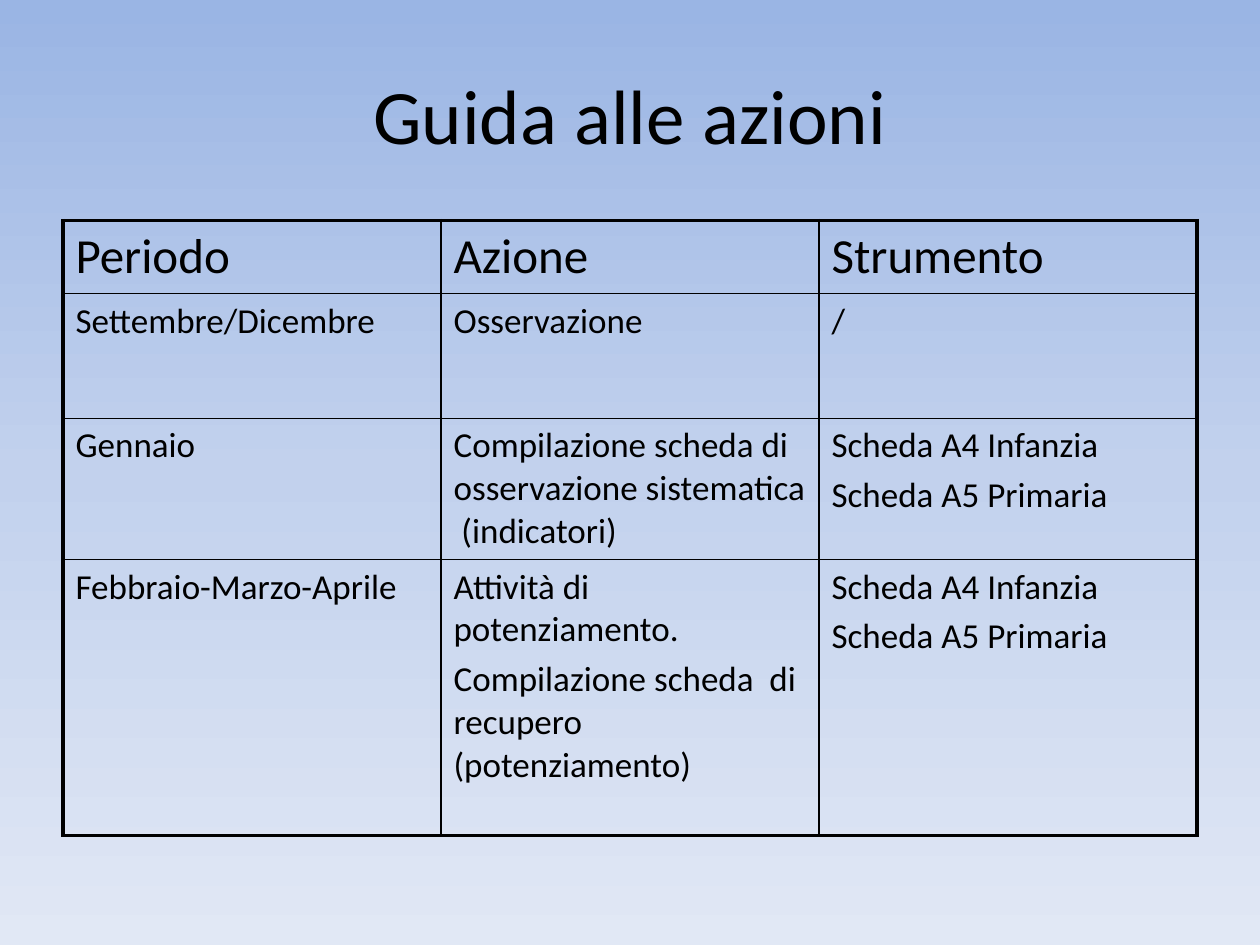
from copy import deepcopy
from lxml import etree
from pptx import Presentation
from pptx import util as u
from pptx.dml.color import RGBColor
from pptx.enum import text
from pptx.oxml.ns import qn

FONT, INK = "Calibri", "000000"
BACKGROUND = [(0, "9AB5E4"), (0.5, "C2D1ED"), (1, "E1E8F5")]
TITLE = "Guida alle azioni"
SHEETS = "Scheda A4 Infanzia\nScheda A5 Primaria"
ROWS = [
    ("Periodo", "Azione", "Strumento"),
    ("Settembre/Dicembre", "Osservazione", "/"),
    ("Gennaio", "Compilazione scheda di osservazione sistematica  (indicatori)", SHEETS),
    ("Febbraio-Marzo-Aprile",
     "Attività di potenziamento.\nCompilazione scheda  di recupero (potenziamento)", SHEETS),
]
ROW_HEIGHTS = [0.58, 0.99, 1.12, 2.19]
COLUMN_WIDTH = 3
OUTER, INNER = 2.25, 1


def color(value):
    return RGBColor.from_string(value)


def write(frame, content, size, align=text.PP_ALIGN.LEFT):
    frame.text = content
    for index, paragraph in enumerate(frame.paragraphs):
        paragraph.alignment = align
        paragraph.space_before = u.Pt(0.2 * size if index else 0)
        for run in paragraph.runs:
            run.font.name, run.font.size = FONT, u.Pt(size)
            run.font.color.rgb = color(INK)


def set_borders(cell, widths):
    properties = cell._tc.get_or_add_tcPr()
    for index, (side, width) in enumerate(zip("LRTB", widths)):
        line = etree.Element(qn("a:ln" + side), w=str(u.Pt(width)))
        fill = etree.SubElement(line, qn("a:solidFill"))
        etree.SubElement(fill, qn("a:srgbClr"), val=INK)
        properties.insert(index, line)


presentation = Presentation()
presentation.slide_width, presentation.slide_height = u.Inches(10), u.Inches(7.5)
slide = presentation.slides.add_slide(presentation.slide_layouts[6])

background = slide.background.fill
background.gradient()
background.gradient_angle = 270
stop_list = next(slide.element.iter(qn("a:gsLst")))
stop_list.insert(1, deepcopy(stop_list[0]))
for stop, (position, shade) in zip(background.gradient_stops, BACKGROUND):
    stop.position, stop.color.rgb = position, color(shade)

title = slide.shapes.add_textbox(u.Inches(0.5), u.Inches(0.28), u.Inches(9), u.Inches(1.25))
title.text_frame.word_wrap = True
title.text_frame.vertical_anchor = text.MSO_ANCHOR.MIDDLE
write(title.text_frame, TITLE, 44, text.PP_ALIGN.CENTER)

row_count, column_count = len(ROWS), len(ROWS[0])
table = slide.shapes.add_table(
    row_count, column_count, u.Inches(0.5), u.Inches(1.75),
    u.Inches(COLUMN_WIDTH * column_count), u.Inches(sum(ROW_HEIGHTS))).table
for column in table.columns:
    column.width = u.Inches(COLUMN_WIDTH)
for r, (contents, height) in enumerate(zip(ROWS, ROW_HEIGHTS)):
    table.rows[r].height = u.Inches(height)
    for c, content in enumerate(contents):
        cell = table.cell(r, c)
        write(cell.text_frame, content, 20 if r else 28)
        cell.fill.background()
        edges = (c == 0, c == column_count - 1, r == 0, r == row_count - 1)
        set_borders(cell, [OUTER if edge else INNER for edge in edges])

presentation.save("out.pptx")
